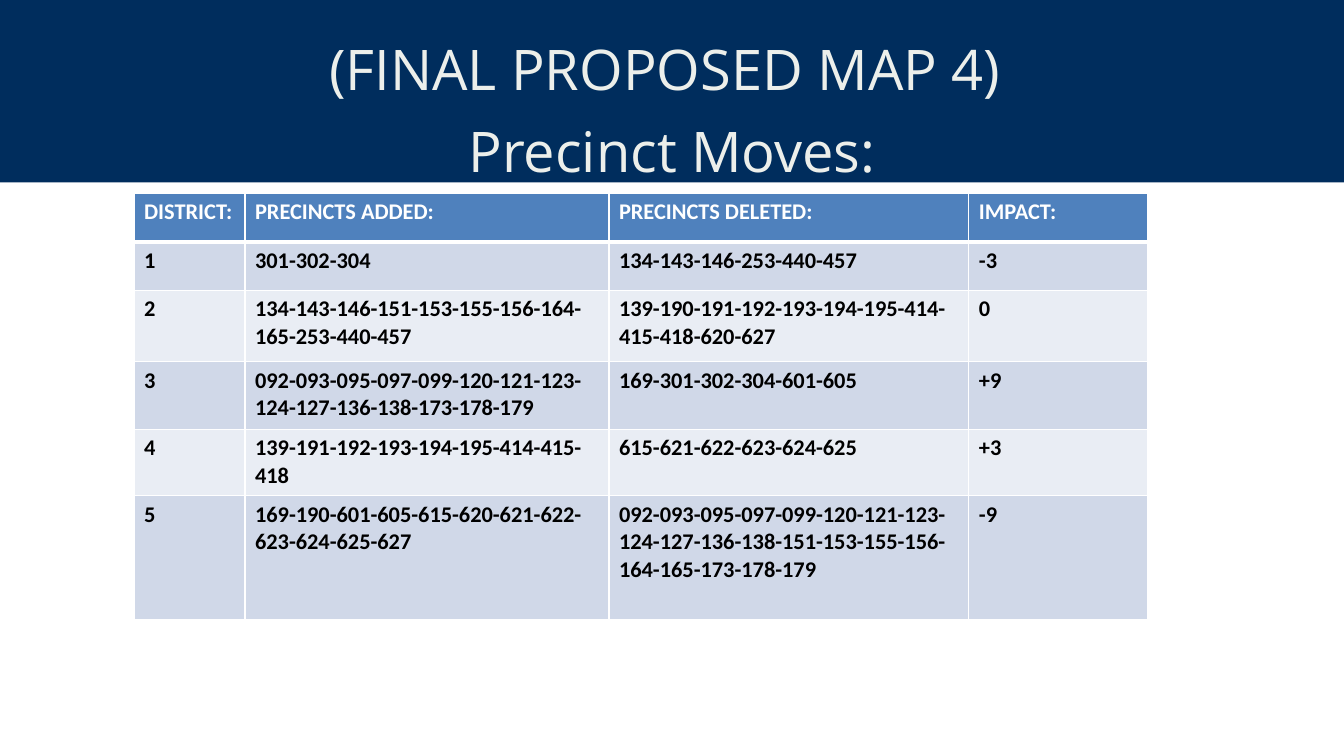
from lxml import etree
from pptx import Presentation
from pptx.dml.color import RGBColor
from pptx.enum.shapes import MSO_SHAPE as Shape
from pptx.enum.text import MSO_ANCHOR as Anchor, MSO_AUTO_SIZE as AutoSize, PP_ALIGN as Align
from pptx.oxml import parse_xml
from pptx.oxml.ns import nsdecls
from pptx.util import Pt

EMU_PER_PX = 9144  # 100 px to the inch
SLIDE_SIZE = (1333, 750)
TITLE_ONLY = 5

NAVY = RGBColor(0x00, 0x2D, 0x5D)
PALE = RGBColor(0xEC, 0xEF, 0xEB)
WHITE = RGBColor(0xFF, 0xFF, 0xFF)
BLACK = RGBColor(0x00, 0x00, 0x00)
HEADER_BLUE = RGBColor(0x4F, 0x81, 0xBD)
BAND_DARK = RGBColor(0xD0, 0xD8, 0xE8)
BAND_LIGHT = RGBColor(0xE9, 0xED, 0xF4)

TITLE_LINES = ["(FINAL PROPOSED MAP 4) ", "Precinct Moves:"]
COLUMN_WIDTHS = [110, 361, 357, 177]
ROW_HEIGHTS = [48, 48, 71, 67, 66, 123]
PRECINCT_MOVES = [
    ("DISTRICT:", "PRECINCTS ADDED:", "PRECINCTS DELETED:", "IMPACT:"),
    ("1", "301-302-304", "134-143-146-253-440-457", "-3"),
    ("2", "134-143-146-151-153-155-156-164-165-253-440-457",
     "139-190-191-192-193-194-195-414-415-418-620-627", "0"),
    ("3", "092-093-095-097-099-120-121-123-124-127-136-138-173-178-179",
     "169-301-302-304-601-605", "+9"),
    ("4", "139-191-192-193-194-195-414-415-418",
     "615-621-622-623-624-625", "+3"),
    ("5", "169-190-601-605-615-620-621-622-623-624-625-627",
     "092-093-095-097-099-120-121-123-124-127-136-138-151-153-155-156-164-165-173-178-179",
     "-9"),
]


def px(length):
    return length * EMU_PER_PX


def set_font(paragraph, name, size, color, bold=False):
    font = paragraph.font
    font.name, font.size, font.bold = name, Pt(size), bold
    font.color.rgb = color


def add_header(slide, left, top, width, height):
    # Navy band, behind the title
    band = slide.shapes.add_shape(Shape.RECTANGLE, px(left), px(top), px(width), px(height))
    band.shadow.inherit = False
    band.fill.solid()
    band.fill.fore_color.rgb = NAVY
    band.line.fill.background()

    # Two-line title
    title = slide.shapes.title
    title.element.addprevious(band.element)
    title.left, title.top = px(left + 32), px(top + 19)
    title.width, title.height = px(width - 64), px(height - 22)
    frame = title.text_frame
    frame.margin_left = frame.margin_top = frame.margin_right = frame.margin_bottom = 0
    frame.vertical_anchor = Anchor.TOP
    frame.word_wrap = True
    frame.auto_size = AutoSize.SHAPE_TO_FIT_TEXT
    frame.text = "\n".join(TITLE_LINES)
    for paragraph in frame.paragraphs:
        paragraph.alignment = Align.CENTER
        paragraph.line_spacing = Pt(58.7)
        paragraph.space_before = Pt(0)
        set_font(paragraph, "Open Sans", 40, PALE)


def set_borders(cell, top_width, bottom_width):
    properties = cell._tc.get_or_add_tcPr()
    widths = {"lnL": 1, "lnR": 1, "lnT": top_width, "lnB": bottom_width}
    for index, (side, width) in enumerate(widths.items()):
        line = parse_xml(f'<a:{side} {nsdecls("a")} w="{Pt(width)}"/>')
        fill = etree.SubElement(line, "{%s}solidFill" % line.nsmap["a"])
        etree.SubElement(fill, "{%s}srgbClr" % line.nsmap["a"], val=str(WHITE))
        properties.insert(index, line)


def add_moves_table(slide, left, top):
    table = slide.shapes.add_table(
        len(ROW_HEIGHTS), len(COLUMN_WIDTHS), px(left), px(top),
        px(sum(COLUMN_WIDTHS)), px(sum(ROW_HEIGHTS))).table
    for column, width in zip(table.columns, COLUMN_WIDTHS):
        column.width = px(width)
    for row, height in zip(table.rows, ROW_HEIGHTS):
        row.height = px(height)

    for row_index, texts in enumerate(PRECINCT_MOVES):
        is_header = row_index == 0
        band_color = BAND_DARK if row_index % 2 else BAND_LIGHT
        for column_index, text in enumerate(texts):
            cell = table.cell(row_index, column_index)
            cell.text = text
            cell.fill.solid()
            cell.fill.fore_color.rgb = HEADER_BLUE if is_header else band_color
            set_font(cell.text_frame.paragraphs[0], "Calibri", 16,
                     WHITE if is_header else BLACK, bold=True)
            set_borders(cell, 3 if row_index == 1 else 1, 3 if is_header else 1)


def main():
    presentation = Presentation()
    presentation.slide_width, presentation.slide_height = map(px, SLIDE_SIZE)
    slide = presentation.slides.add_slide(presentation.slide_layouts[TITLE_ONLY])
    add_header(slide, 0, 0, SLIDE_SIZE[0], 181)
    add_moves_table(slide, 133, 192)
    presentation.save("out.pptx")


if __name__ == "__main__":
    main()
